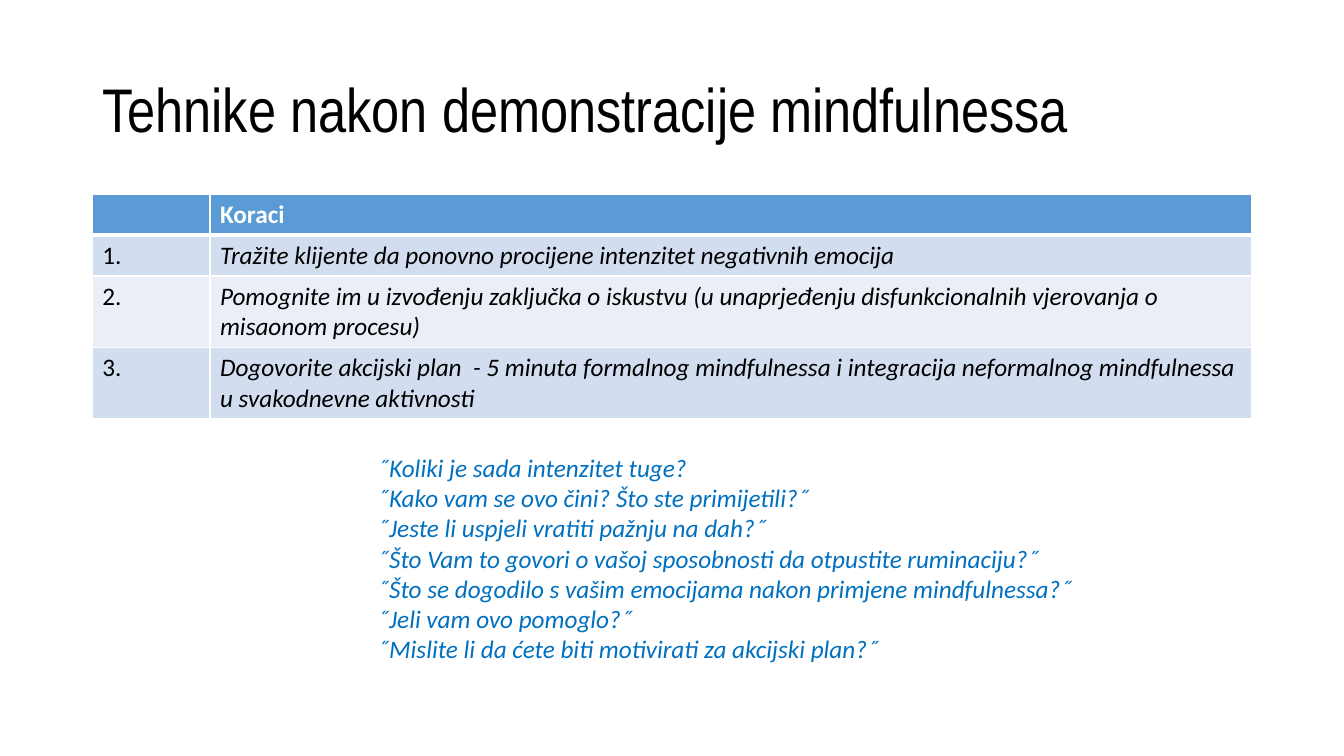
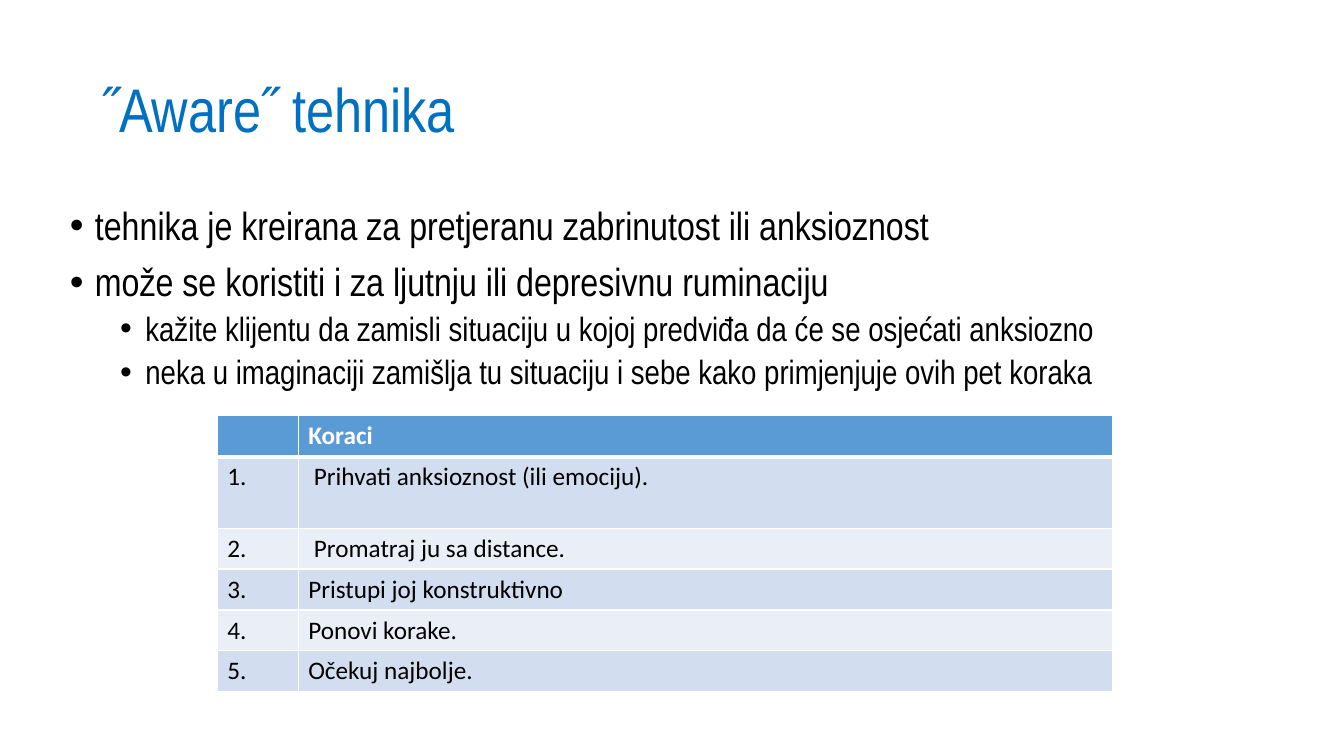
from dataclasses import dataclass

from lxml import etree
from pptx import Presentation, util as u
from pptx.dml.color import RGBColor
from pptx.enum import text as t
from pptx.oxml import ns

PX = 9525  # EMU in one px, 96 px to the inch
COLORS = {
    "black": "000000", "white": "FFFFFF", "blue": "0070C0",
    "head": "5B9BD5", "odd": "D2DEEF", "even": "EAEFF7",
}
NARROW, PLAIN = "Arial Narrow", "Calibri"
ROW, TALL = 39, 68


@dataclass(frozen=True)
class Box:
    left: int
    top: int
    width: int
    height: int

    def emu(self) -> list[int]:
        return [v * PX for v in (self.left, self.top, self.width, self.height)]


@dataclass(frozen=True)
class Font:
    name: str = PLAIN
    size: int = 18
    color: str = "black"
    bold: bool = False
    italic: bool = False


@dataclass(frozen=True)
class Level:
    """Look of one bullet level: font size, left margin and space before."""
    size: int
    margin: int
    space: int


@dataclass(frozen=True)
class Step:
    words: str
    height: int = ROW


TITLE = Box(88, 38, 1104, 139)
HANG = 24
LEVELS = (Level(28, 24, 10), Level(24, 72, 5))

STEPS = [
    Step("Tražite klijente da ponovno procijene intenzitet negativnih emocija"),
    Step("Pomognite im u izvođenju zaključka o iskustvu (u unaprjeđenju "
         "disfunkcionalnih vjerovanja o misaonom procesu)", TALL),
    Step("Dogovorite akcijski plan  - 5 minuta formalnog mindfulnessa i "
         "integracija neformalnog mindfulnessa u svakodnevne aktivnosti", TALL),
]
ASKS = [
    "˝Koliki je sada intenzitet tuge?",
    "˝Kako vam se ovo čini? Što ste primijetili?˝",
    "˝Jeste li uspjeli vratiti pažnju na dah?˝",
    "˝Što Vam to govori o vašoj sposobnosti da otpustite ruminaciju?˝",
    "˝Što se dogodilo s vašim emocijama nakon primjene mindfulnessa?˝",
    "˝Jeli vam ovo pomoglo?˝",
    "˝Mislite li da ćete biti motivirati za akcijski plan?˝",
]
POINTS = [
    (0, "tehnika je kreirana za pretjeranu zabrinutost ili anksioznost"),
    (0, "može se koristiti i za ljutnju ili depresivnu ruminaciju"),
    (1, "kažite klijentu da zamisli situaciju u kojoj predviđa da će se "
        "osjećati anksiozno"),
    (1, "neka u imaginaciji zamišlja tu situaciju i sebe kako primjenjuje "
        "ovih pet koraka"),
]
AWARE = [
    Step(" Prihvati anksioznost (ili emociju).", TALL),
    Step(" Promatraj ju sa distance."),
    Step("Pristupi joj konstruktivno"),
    Step("Ponovi korake."),
    Step("Očekuj najbolje."),
]


def rgb(name: str) -> RGBColor:
    return RGBColor.from_string(COLORS[name])


def write(para, words: str, font: Font) -> None:
    run = para.add_run()
    run.text = words
    face = run.font
    face.name, face.size = font.name, u.Pt(font.size)
    face.bold, face.italic = font.bold, font.italic
    face.color.rgb = rgb(font.color)


def frame(slide, box: Box):
    """Add a wrapping text box and return its text frame."""
    body = slide.shapes.add_textbox(*box.emu()).text_frame
    body.word_wrap = True
    return body


def paras(body, count: int) -> list:
    return [body.paragraphs[0]] + [body.add_paragraph() for _ in range(count - 1)]


def title(slide, words: str, color: str = "black") -> None:
    body = frame(slide, TITLE)
    body.vertical_anchor = t.MSO_ANCHOR.MIDDLE
    para = body.paragraphs[0]
    para.line_spacing = 0.9
    write(para, words, Font(NARROW, 44, color))


def lines(slide, box: Box, items: list[str], font: Font) -> None:
    body = frame(slide, box)
    for para, words in zip(paras(body, len(items)), items):
        write(para, words, font)


def bullets(slide, box: Box, items: list[tuple[int, str]]) -> None:
    body = frame(slide, box)
    for para, (depth, words) in zip(paras(body, len(items)), items):
        level = LEVELS[depth]
        para.level = depth
        para.line_spacing = 0.9
        para.space_before = u.Pt(level.space)
        props = para._p.get_or_add_pPr()
        props.set("marL", str(level.margin * PX))
        props.set("indent", str(-HANG * PX))
        etree.SubElement(props, ns.qn("a:buFont"), typeface="Arial")
        etree.SubElement(props, ns.qn("a:buChar"), char="•")
        write(para, words, Font(NARROW, level.size))


def edge(cell, top: int, bottom: int) -> None:
    """Give a cell white borders; top and bottom widths are in points."""
    props = cell._tc.get_or_add_tcPr()
    sides = (("L", 1), ("R", 1), ("T", top), ("B", bottom))
    for place, (side, width) in enumerate(sides):
        line = etree.Element(ns.qn(f"a:ln{side}"), w=str(u.Pt(width)))
        fill = etree.SubElement(line, ns.qn("a:solidFill"))
        etree.SubElement(fill, ns.qn("a:srgbClr"), val=COLORS["white"])
        props.insert(place, line)


def table(slide, left: int, top: int, cols: tuple[int, int],
          steps: list[Step], italic: bool = False) -> None:
    """Draw a header row and one numbered row for each step."""
    highs = [ROW] + [step.height for step in steps]
    box = Box(left, top, sum(cols), sum(highs))
    grid = slide.shapes.add_table(len(highs), len(cols), *box.emu()).table
    for col, width in zip(grid.columns, cols):
        col.width = width * PX
    for row, high in zip(grid.rows, highs):
        row.height = high * PX

    rows = [("", "Koraci")]
    rows += [(f"{n}.", step.words) for n, step in enumerate(steps, 1)]
    for y, row in enumerate(rows):
        shade = "head" if y == 0 else "odd" if y % 2 else "even"
        for x, words in enumerate(row):
            cell = grid.cell(y, x)
            cell.fill.solid()
            cell.fill.fore_color.rgb = rgb(shade)
            edge(cell, 3 if y == 1 else 1, 3 if y == 0 else 1)
            if words:
                font = (Font(color="white", bold=True) if y == 0
                        else Font(italic=italic and x == 1))
                write(cell.text_frame.paragraphs[0], words, font)


def main() -> None:
    deck = Presentation()
    deck.slide_width, deck.slide_height = 1280 * PX, 720 * PX
    blank = deck.slide_layouts[6]

    after = deck.slides.add_slide(blank)
    title(after, "Tehnike nakon demonstracije mindfulnessa")
    table(after, 88, 185, (112, 992), STEPS, italic=True)
    lines(after, Box(350, 426, 762, 242), ASKS, Font(color="blue", italic=True))

    aware = deck.slides.add_slide(blank)
    title(aware, "˝Aware˝ tehnika", "blue")
    bullets(aware, Box(57, 192, 1136, 513), POINTS)
    table(aware, 207, 396, (77, 776), AWARE)

    deck.save("out.pptx")


if __name__ == "__main__":
    main()
